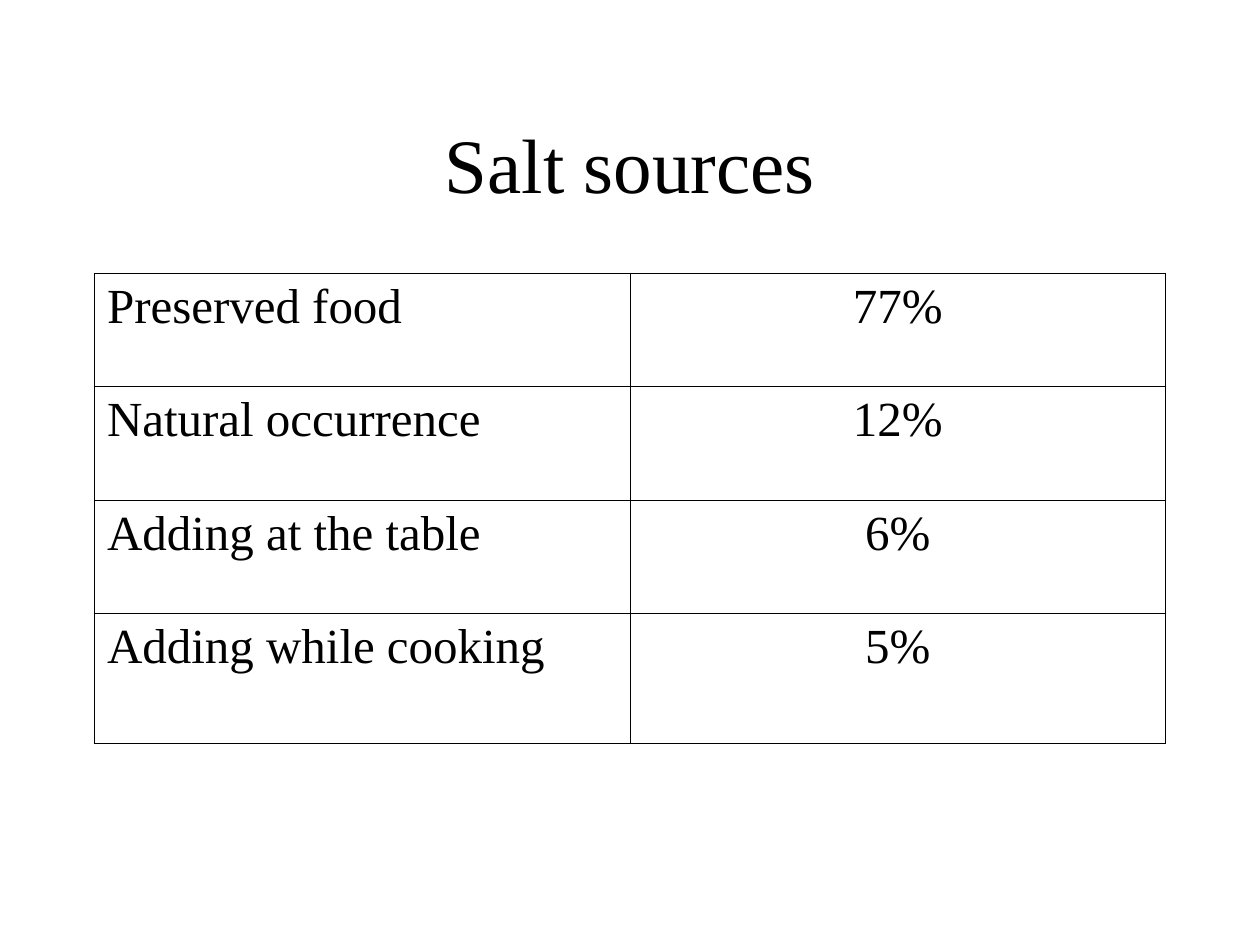
from lxml import etree
from pptx import Presentation
from pptx.dml.color import RGBColor
from pptx.enum.text import MSO_ANCHOR, PP_ALIGN
from pptx.oxml.ns import qn
from pptx.util import Inches, Pt

BLACK = RGBColor(0x00, 0x00, 0x00)
WHITE = RGBColor(0xFF, 0xFF, 0xFF)
FONT = "Times New Roman"
OUTER, INNER = Pt(1.08), Pt(0.45)

SOURCES = [
    ("Preserved food", "77%"),
    ("Natural occurrence", "12%"),
    ("Adding at the table", "6%"),
    ("Adding while cooking", "5%"),
]
ROW_HEIGHTS = [0.9, 0.9, 0.9, 1.03]


def write(tf, text, size, align=PP_ALIGN.LEFT, before=0, color=BLACK):
    p = tf.paragraphs[0]
    p.alignment = align
    p.space_before = Pt(before)
    r = p.add_run()
    r.text = text
    r.font.name = FONT
    r.font.size = Pt(size)
    r.font.color.rgb = color


def set_borders(cell, widths, color=BLACK):
    """Draw the cell's borders; widths are in the order left, right, top, bottom."""
    tc_pr = cell._tc.get_or_add_tcPr()
    for i, (side, width) in enumerate(zip("LRTB", widths)):
        ln = etree.Element(qn(f"a:ln{side}"), w=str(int(width)))
        fill = etree.SubElement(ln, qn("a:solidFill"))
        etree.SubElement(fill, qn("a:srgbClr"), val=str(color))
        tc_pr.insert(i, ln)


class SlideBuilder:
    def __init__(self, prs):
        self.slide = prs.slides.add_slide(prs.slide_layouts[5])
        fill = self.slide.background.fill
        fill.solid()
        fill.fore_color.rgb = WHITE

    def title(self, text, left, top, width, height):
        s = self.slide.shapes.title
        s.left, s.top = Inches(left), Inches(top)
        s.width, s.height = Inches(width), Inches(height)
        s.text_frame.word_wrap = True
        s.text_frame.vertical_anchor = MSO_ANCHOR.MIDDLE
        write(s.text_frame, text, 44, align=PP_ALIGN.CENTER)

    def table(self, rows, left, top, width, heights):
        n_rows, n_cols = len(rows), len(rows[0])
        table = self.slide.shapes.add_table(
            n_rows, n_cols, Inches(left), Inches(top),
            Inches(width), Inches(sum(heights))).table
        table.first_row = table.horz_banding = False
        for row, height in zip(table.rows, heights):
            row.height = Inches(height)
        for i, values in enumerate(rows):
            for j, value in enumerate(values):
                cell = table.cell(i, j)
                cell.fill.background()
                align = PP_ALIGN.CENTER if j else PP_ALIGN.LEFT
                write(cell.text_frame, value, 28, align=align, before=7)
                on_edge = (j == 0, j == n_cols - 1, i == 0, i == n_rows - 1)
                set_borders(cell, [OUTER if edge else INNER for edge in on_edge])


def main():
    prs = Presentation()
    prs.slide_width, prs.slide_height = Inches(10), Inches(7.5)
    builder = SlideBuilder(prs)
    builder.title("Salt sources", 0.75, 0.67, 8.5, 1.25)
    builder.table(SOURCES, 0.75, 2.17, 8.5, ROW_HEIGHTS)
    prs.save("out.pptx")


if __name__ == "__main__":
    main()
